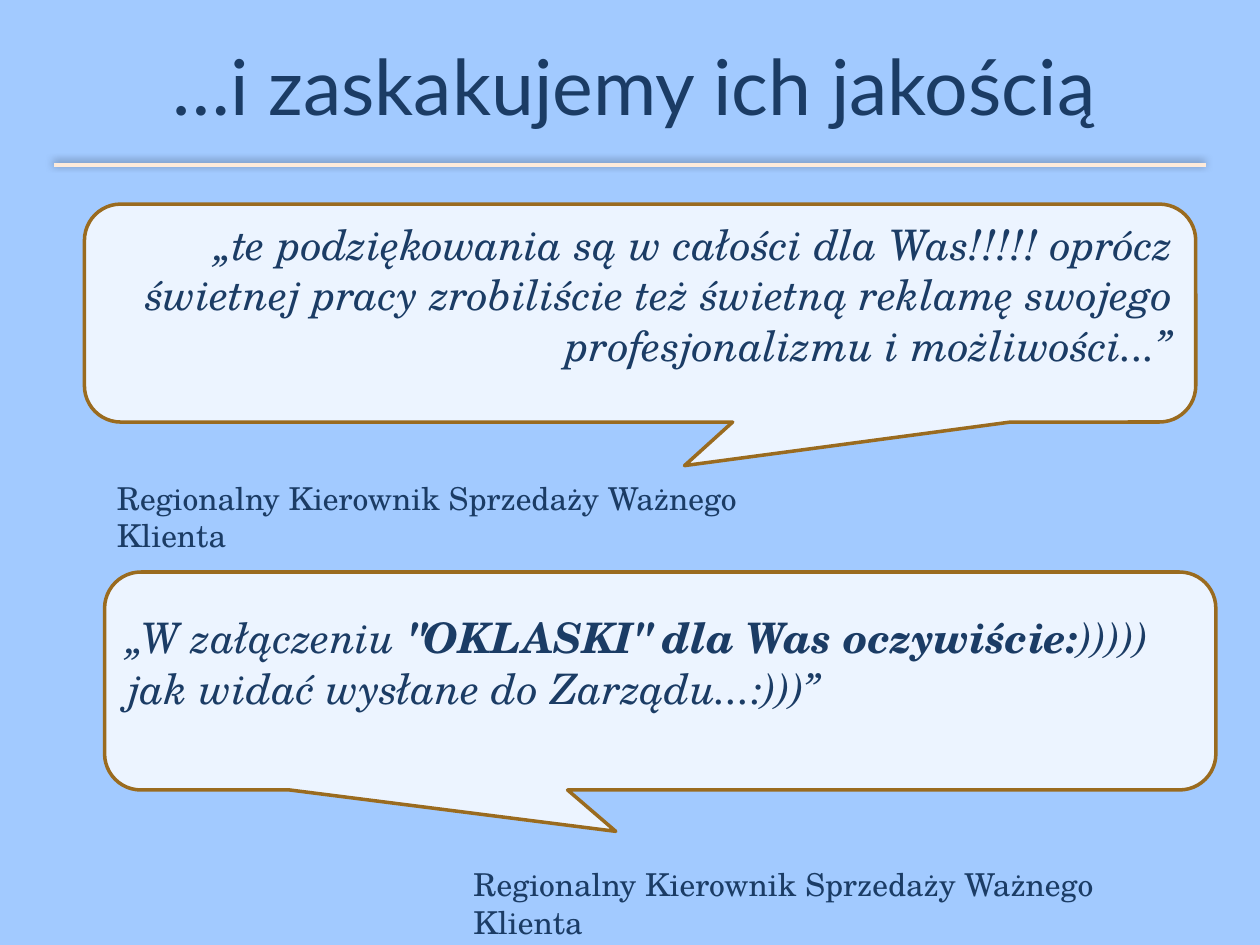
"""Build a slide with two customer quotes in speech balloons."""
from lxml import etree
from pptx import Presentation, util as u
from pptx.dml.color import RGBColor
from pptx.enum import shapes, text
from pptx.oxml import ns

SKY = RGBColor(0xA2, 0xCA, 0xFF)
ICE = RGBColor(0xEC, 0xF4, 0xFF)
NAVY = RGBColor(0x1B, 0x3C, 0x65)
BRONZE = RGBColor(0x9A, 0x6B, 0x1F)
CREAM = RGBColor(0xFD, 0xEA, 0xDA)
SANS, SERIF = "Lato", "TeX Gyre Schola"
COLUMNS, ROWS = 100, 75


class Slide:
    """Hold the style and the current page; lengths are grid columns and rows."""

    def __init__(self, deck):
        self.deck = deck
        self.page = deck.slides.add_slide(deck.slide_layouts[6])
        fill = self.page.background.fill
        fill.solid()
        fill.fore_color.rgb = SKY

    def grid(self, columns, rows):
        """Turn columns and rows into slide lengths."""
        return (u.Emu(round(self.deck.slide_width * columns / COLUMNS)),
                u.Emu(round(self.deck.slide_height * rows / ROWS)))

    def area(self, left, top, width, height):
        """Turn a grid area into the four lengths of a shape."""
        return *self.grid(left, top), *self.grid(width, height)

    def shade(self, properties, blur, distance, angle):
        """Add a half-transparent black shadow to shape or text properties."""
        effects = etree.SubElement(properties, ns.qn("a:effectLst"))
        shadow = etree.SubElement(
            effects, ns.qn("a:outerShdw"), blurRad=str(u.Pt(blur)),
            dist=str(u.Pt(distance)), dir=str(angle * 60000), rotWithShape="0")
        black = etree.SubElement(shadow, ns.qn("a:srgbClr"), val="000000")
        etree.SubElement(black, ns.qn("a:alpha"), val="50000")

    def add_words(self, frame, spans, align, frame_format, **font_format):
        """Set (words, bold) spans as one paragraph and return it."""
        for name, value in {"word_wrap": True, **frame_format}.items():
            setattr(frame, name, value)
        para = frame.paragraphs[0]
        para.alignment = align
        for words, bold in spans:
            span = para.add_run()
            span.text = words
            span.font.color.rgb = NAVY
            for name, value in {"bold": bold, **font_format}.items():
                setattr(span.font, name, value)
        return para

    def rule(self, left, right, row):
        """Draw the shaded horizontal line below the title."""
        line = self.page.shapes.add_connector(
            shapes.MSO_CONNECTOR.STRAIGHT, *self.grid(left, row), *self.grid(right, row))
        line.line.color.rgb = CREAM
        line.line.width = u.Pt(2)
        self.shade(line._element.spPr, 5, 2, 245)

    def title(self, area, words):
        """Add the shaded, centred title."""
        box = self.page.shapes.add_textbox(*self.area(*area))
        para = self.add_words(box.text_frame, [(words, False)], text.PP_ALIGN.CENTER,
                              {"vertical_anchor": text.MSO_ANCHOR.MIDDLE},
                              name=SANS, size=u.Pt(44))
        properties = para.runs[0].font._element
        self.shade(properties, 4, 3, 45)
        properties.insert(1, properties[-1])

    def quote(self, area, tip, spans, align):
        """Draw a speech balloon with its tail pointing at tip."""
        balloon = self.page.shapes.add_shape(
            shapes.MSO_SHAPE.ROUNDED_RECTANGULAR_CALLOUT, *self.area(*area))
        balloon.shadow.inherit = False
        balloon.fill.solid()
        balloon.fill.fore_color.rgb = ICE
        balloon.line.color.rgb = BRONZE
        balloon.line.width = u.Pt(2)
        for index, value in enumerate(tip):
            balloon.adjustments[index] = value
        self.add_words(balloon.text_frame, spans, align,
                       {"vertical_anchor": text.MSO_ANCHOR.MIDDLE,
                        "margin_bottom": u.Inches(0.35)},
                       name=SERIF, size=u.Pt(24), italic=True)

    def author(self, area, words):
        """Name who said the quote."""
        box = self.page.shapes.add_textbox(*self.area(*area))
        self.add_words(box.text_frame, [(words, False)], text.PP_ALIGN.LEFT, {},
                       name=SERIF, size=u.Pt(18))


def main():
    """Build and save the deck."""
    deck = Presentation()
    deck.slide_width, deck.slide_height = u.Inches(10), u.Inches(7.5)
    slide = Slide(deck)
    slide.rule(4.3, 95.7, 13.1)
    slide.title((4.3, 0.5, 92.1, 12.5), "…i zaskakujemy ich jakością")
    thanks = [("„te podziękowania są w całości dla Was!!!!! oprócz świetnej pracy "
               "zrobiliście też świetną reklamę swojego profesjonalizmu "
               "i możliwości...”", False)]
    applause = [("„W załączeniu ", False),
                ("\"OKLASKI\" dla Was oczywiście:", True),
                ("))))) jak widać wysłane do Zarządu...:)))”", False)]
    slide.quote((6.7, 16.2, 88.2, 17.3), (0.04, 0.7), thanks, text.PP_ALIGN.RIGHT)
    slide.quote((8.3, 45.4, 88.2, 17.3), (-0.04, 0.69), applause, text.PP_ALIGN.LEFT)
    for left, top in ((8.3, 37.5), (36.6, 68.2)):
        slide.author((left, top, 52.4, 4), "Regionalny Kierownik Sprzedaży Ważnego Klienta")
    deck.save("out.pptx")


if __name__ == "__main__":
    main()
